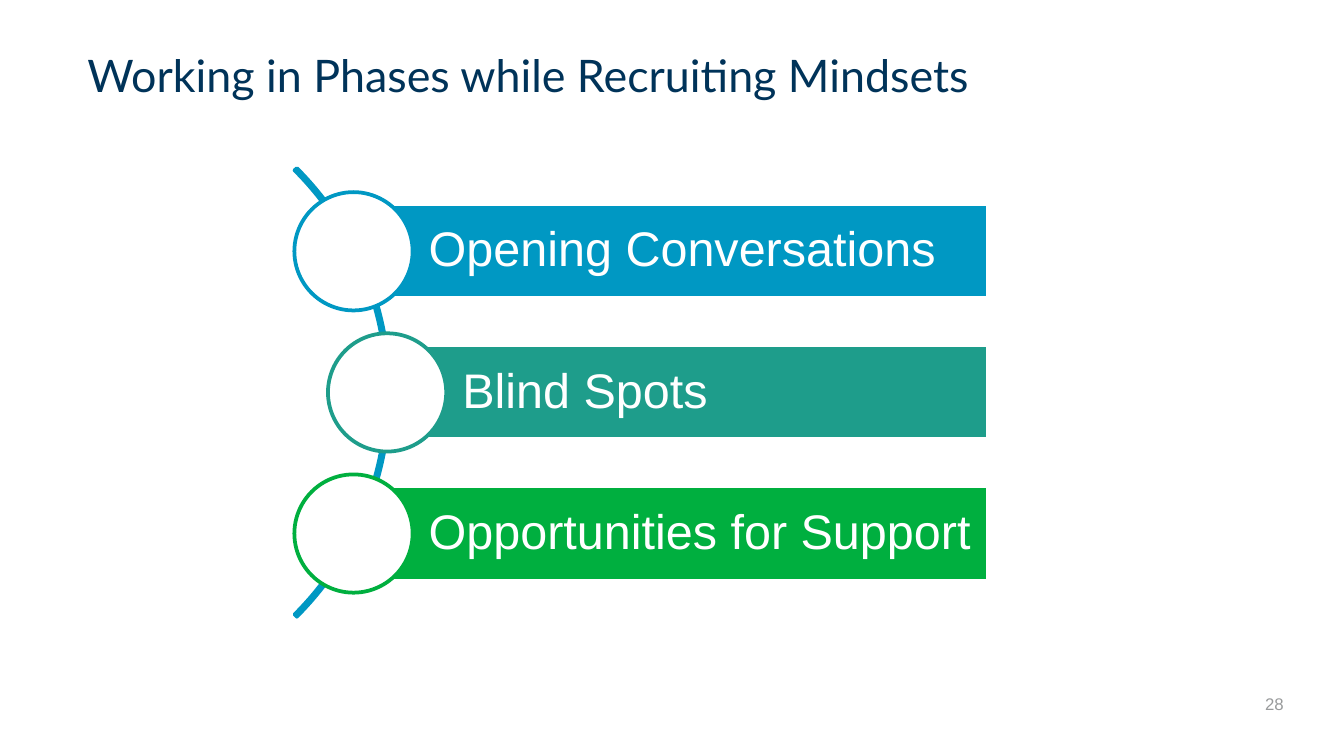
from dataclasses import dataclass
from typing import Any

from pptx import Presentation
from pptx.dml.color import RGBColor as Color
from pptx.enum.shapes import MSO_SHAPE as Preset
from pptx.enum.text import MSO_ANCHOR as Anchor, MSO_AUTO_SIZE as AutoSize, PP_ALIGN as Align
from pptx.util import Inches, Pt


@dataclass(frozen=True)
class Theme:
    navy: str = "003359"
    blue: str = "0098C3"
    teal: str = "1E9D8B"
    green: str = "00AF3F"
    gray: str = "999B9C"
    white: str = "FFFFFF"
    title_font: str = "Lato"
    body_font: str = "Arial"
    title_size: int = 24
    phase_size: int = 26
    number_size: int = 9
    line_width: int = 2


@dataclass(frozen=True)
class Phase:
    label: str
    color: str
    center_x: float
    center_y: float


THEME = Theme()
PAGE_WIDTH = 10
PAGE_HEIGHT = PAGE_WIDTH * 9 / 16
MIDDLE_Y = 2.92
PITCH = 1.05
BAR_RIGHT = 7.35
BAR_HEIGHT = 0.7
CIRCLE_SIZE = 0.88
ARC_SIZE = 4.72
ARC_CENTER_X = 0.54

PHASES = [
    Phase("Opening Conversations", THEME.blue, 2.63, MIDDLE_Y - PITCH),
    Phase("Blind Spots", THEME.teal, 2.88, MIDDLE_Y),
    Phase("Opportunities for Support", THEME.green, 2.63, MIDDLE_Y + PITCH),
]


def apply_format(target: Any, values: dict[str, Any]) -> None:
    for name, value in values.items():
        setattr(target, name, value)


def write_text(box: Any, text: str, font: str, size: int, color: str,
               align: Align = Align.LEFT, spacing: float = 1.0,
               left: float = 0.1, margin: float = 0.1, edge: float = 0.05) -> None:
    frame = box.text_frame
    apply_format(frame, {
        "word_wrap": True, "auto_size": AutoSize.NONE,
        "vertical_anchor": Anchor.MIDDLE,
        "margin_left": Inches(left), "margin_right": Inches(margin),
        "margin_top": Inches(edge), "margin_bottom": Inches(edge),
    })
    para = frame.paragraphs[0]
    apply_format(para, {"alignment": align, "line_spacing": spacing, "space_before": Pt(0)})
    span = para.add_run()
    span.text = text
    apply_format(span.font, {"name": font, "size": Pt(size), "bold": False})
    span.font.color.rgb = Color.from_string(color)


def add_preset(page: Any, preset: Preset, left: float, top: float, width: float,
               height: float, fill: str | None, line: str) -> Any:
    shape = page.shapes.add_shape(
        preset, Inches(left), Inches(top), Inches(width), Inches(height))
    shape.shadow.inherit = False
    if fill is None:
        shape.fill.background()
    else:
        shape.fill.solid()
        shape.fill.fore_color.rgb = Color.from_string(fill)
    shape.line.color.rgb = Color.from_string(line)
    shape.line.width = Pt(THEME.line_width)
    return shape


def add_arc(page: Any) -> None:
    arc = add_preset(page, Preset.BLOCK_ARC, ARC_CENTER_X - ARC_SIZE / 2,
                     MIDDLE_Y - ARC_SIZE / 2, ARC_SIZE, ARC_SIZE, None, THEME.blue)
    for index, value in enumerate((189, 27, 0.005)):
        arc.adjustments[index] = value


def add_phase(page: Any, phase: Phase) -> None:
    bar = add_preset(page, Preset.RECTANGLE, phase.center_x,
                     phase.center_y - BAR_HEIGHT / 2, BAR_RIGHT - phase.center_x,
                     BAR_HEIGHT, phase.color, THEME.white)
    write_text(bar, phase.label, THEME.body_font, THEME.phase_size, THEME.white,
               spacing=0.9, left=0.56, margin=0.07, edge=0.07)
    add_preset(page, Preset.OVAL, phase.center_x - CIRCLE_SIZE / 2,
               phase.center_y - CIRCLE_SIZE / 2, CIRCLE_SIZE, CIRCLE_SIZE,
               THEME.white, phase.color)


def add_title(page: Any, text: str) -> None:
    title = page.shapes.title
    apply_format(title, {"left": Inches(0.55), "top": Inches(0.17),
                         "width": Inches(7.86), "height": Inches(0.82)})
    write_text(title, text, THEME.title_font, THEME.title_size, THEME.navy, spacing=0.9)


def add_page_number(page: Any, number: str) -> None:
    box = page.shapes.add_textbox(Inches(7.4), Inches(5.09), Inches(2.25), Inches(0.3))
    write_text(box, number, THEME.body_font, THEME.number_size, THEME.gray, Align.RIGHT)


def main() -> None:
    deck = Presentation()
    apply_format(deck, {"slide_width": Inches(PAGE_WIDTH),
                        "slide_height": Inches(PAGE_HEIGHT)})
    page = deck.slides.add_slide(deck.slide_layouts.get_by_name("Title Only"))
    add_page_number(page, "28")
    add_title(page, "Working in Phases while Recruiting Mindsets")
    add_arc(page)
    for phase in PHASES:
        add_phase(page, phase)
    deck.save("out.pptx")


if __name__ == "__main__":
    main()
